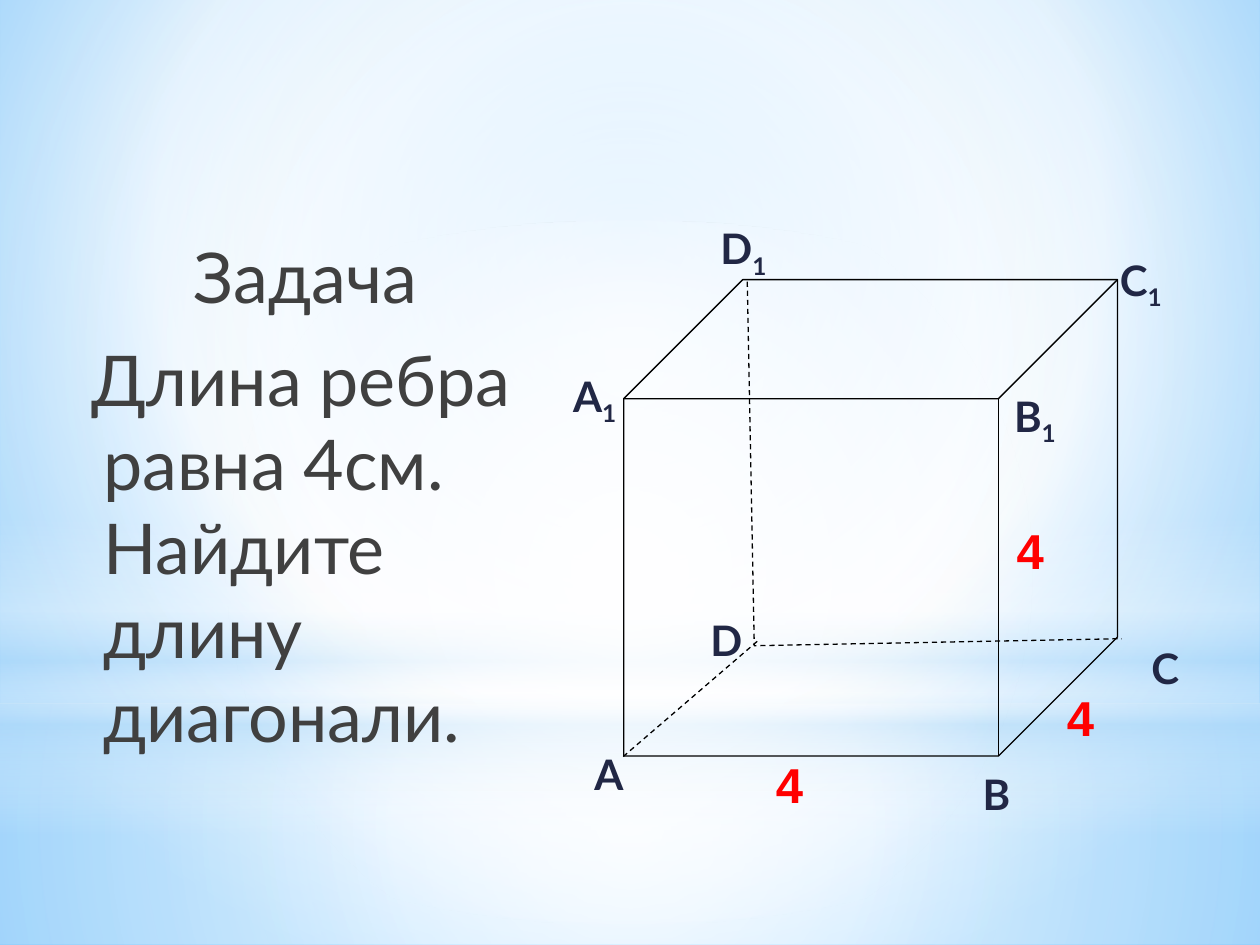
from lxml import etree
from pptx import Presentation
from pptx.dml.color import RGBColor
from pptx.enum.dml import MSO_LINE
from pptx.enum.shapes import MSO_CONNECTOR, MSO_SHAPE
from pptx.enum.text import MSO_ANCHOR, MSO_AUTO_SIZE, PP_ALIGN
from pptx.oxml.ns import nsdecls, qn
from pptx.util import Pt

RECTANGLE, OVAL, CUBE = MSO_SHAPE.RECTANGLE, MSO_SHAPE.OVAL, MSO_SHAPE.CUBE
DASH = MSO_LINE.DASH
COLORS = {"text": "404040", "label": "212745", "length": "FF0000", "edge": "000000",
          "white": "FFFFFF", "pale": "B4DCFA", "sky": "9ED5FF", "blue": "5BB9FF"}
CENTER = (50, 50, 50, 50)


def set_gradient(parent, stops, focus):
    """Swap the solid fill for a gradient: circular around focus, or vertical without it."""
    marks = "".join(
        f'<a:gs pos="{position * 1000}"><a:srgbClr val="{COLORS[color]}">'
        f'<a:alpha val="{alpha * 1000}"/></a:srgbClr></a:gs>'
        for position, color, alpha in stops)
    shading = '<a:lin ang="5400000" scaled="0"/>'
    if focus:
        left, top, right, bottom = (value * 1000 for value in focus)
        shading = (f'<a:path path="circle"><a:fillToRect l="{left}" t="{top}" '
                   f'r="{right}" b="{bottom}"/></a:path>')
    gradient = etree.fromstring(f'<a:gradFill {nsdecls("a")} rotWithShape="1">'
                                f'<a:gsLst>{marks}</a:gsLst>{shading}</a:gradFill>')
    parent.replace(parent.find(qn("a:solidFill")), gradient)


def add_label(page, left, top, width, height, texts, size, font, color):
    """Add a bold label; a second text becomes a subscript."""
    box = page.shapes.add_textbox(Pt(left), Pt(top), Pt(width), Pt(height))
    box.text_frame.word_wrap = True
    para = box.text_frame.paragraphs[0]
    for index, text in enumerate(texts):
        span = para.add_run()
        span.text = text
        span.font.name, span.font.size, span.font.bold = font, Pt(size), True
        span.font.color.rgb = RGBColor.from_string(COLORS[color])
        if index:
            span.font._element.set("baseline", "-25000")


deck = Presentation()
deck.slide_width, deck.slide_height = Pt(720), Pt(540)
page = deck.slides.add_slide(deck.slide_layouts[1])
title = page.shapes.title
title._element.getparent().remove(title._element)

# Background
page.background.fill.solid()
set_gradient(page._element.cSld.find(qn("p:bg")).find(qn("p:bgPr")),
             [(0, "sky", 100), (60, "white", 100), (100, "blue", 100)], (20, 10, 20, 60))

# Soft light over the background
lights = [
    (RECTANGLE, 401.8, 138.2, CENTER,
     [(0, "white", 91), (37, "white", 76), (100, "pale", 79)]),
    (RECTANGLE, 0, 401.8, CENTER,
     [(0, "white", 89), (48, "white", 62), (100, "pale", 79)]),
    (RECTANGLE, 296.6, 180, None,
     [(0, "white", 0), (29, "white", 30), (45, "pale", 40),
      (55, "white", 26), (65, "pale", 60), (100, "white", 0)]),
    (OVAL, 126, 401.8, CENTER, [(0, "white", 100), (56, "white", 0)]),
]
for kind, top, height, focus, stops in lights:
    light = page.shapes.add_shape(kind, 0, Pt(top), Pt(720), Pt(height))
    light.shadow.inherit = False
    light.line.fill.background()
    light.fill.solid()
    set_gradient(light._element.spPr, stops, focus)

# Task text, placed in front of the light
body = page.placeholders[1]
page.shapes._spTree.append(body._element)
body.left, body.top, body.width, body.height = Pt(33.8), Pt(129.6), Pt(278), Pt(337.7)
frame = body.text_frame
frame.word_wrap = True
frame.auto_size = MSO_AUTO_SIZE.NONE
frame.vertical_anchor = MSO_ANCHOR.TOP
task = [("Задача", PP_ALIGN.CENTER, -14.4, 0),
        ("Длина ребра равна 4см. Найдите длину диагонали.", PP_ALIGN.LEFT, -6.7, 8)]
for index, (text, alignment, indent, before) in enumerate(task):
    para = frame.add_paragraph() if index else frame.paragraphs[0]
    properties = para._p.get_or_add_pPr()
    properties.set("marL", str(Pt(18)))
    properties.set("indent", str(Pt(indent)))
    etree.SubElement(properties, qn("a:buNone"))
    para.alignment = alignment
    para.space_before, para.space_after = Pt(before), Pt(3)
    span = para.add_run()
    span.text = text
    span.font.name, span.font.size = "Lato", Pt(40)
    span.font.color.rgb = RGBColor.from_string(COLORS["text"])

# Cube with its hidden edges
builder = page.shapes.build_freeform(427, 160.6, scale=Pt(1))
builder.add_line_segments([(430.6, 368.6), (640.8, 365)], close=False)
hidden_edges = builder.convert_to_shape()
hidden_diagonal = page.shapes.add_connector(
    MSO_CONNECTOR.STRAIGHT, Pt(432.7), Pt(366.5), Pt(355.7), Pt(432.7))
etree.SubElement(hidden_diagonal._element.spPr, qn("a:effectLst"))
cube = page.shapes.add_shape(CUBE, Pt(356.4), Pt(159.8), Pt(282.2), Pt(272.2))
cube.adjustments[0] = 0.25
for shape in (hidden_edges, cube):
    shape.shadow.inherit = False
    shape.fill.background()
for shape in (hidden_edges, hidden_diagonal, cube):
    shape.line.color.rgb = RGBColor.from_string(COLORS["edge"])
    shape.line.width = Pt(0.75)
for shape in (hidden_edges, hidden_diagonal):
    shape.line.dash_style = DASH

# Vertex names
vertices = [(650.9, 363.6, "С"), (398.9, 347.8, "D"), (332.6, 424.1, "А"), (554.4, 435.6, "В"),
            (320.4, 208.1, "А1"), (404.6, 123.8, "D1"), (632.9, 141.8, "С1"), (572.4, 219.6, "В1")]
for left, top, name in vertices:
    add_label(page, left, top, 48.2, 36, name, 24, "Lato", "label")

# Edge lengths
for left, top in [(436.3, 427.7), (573.8, 293.8), (602.6, 389.5)]:
    add_label(page, left, top, 30.2, 41, "4", 28, "Arial", "length")

deck.save("out.pptx")
